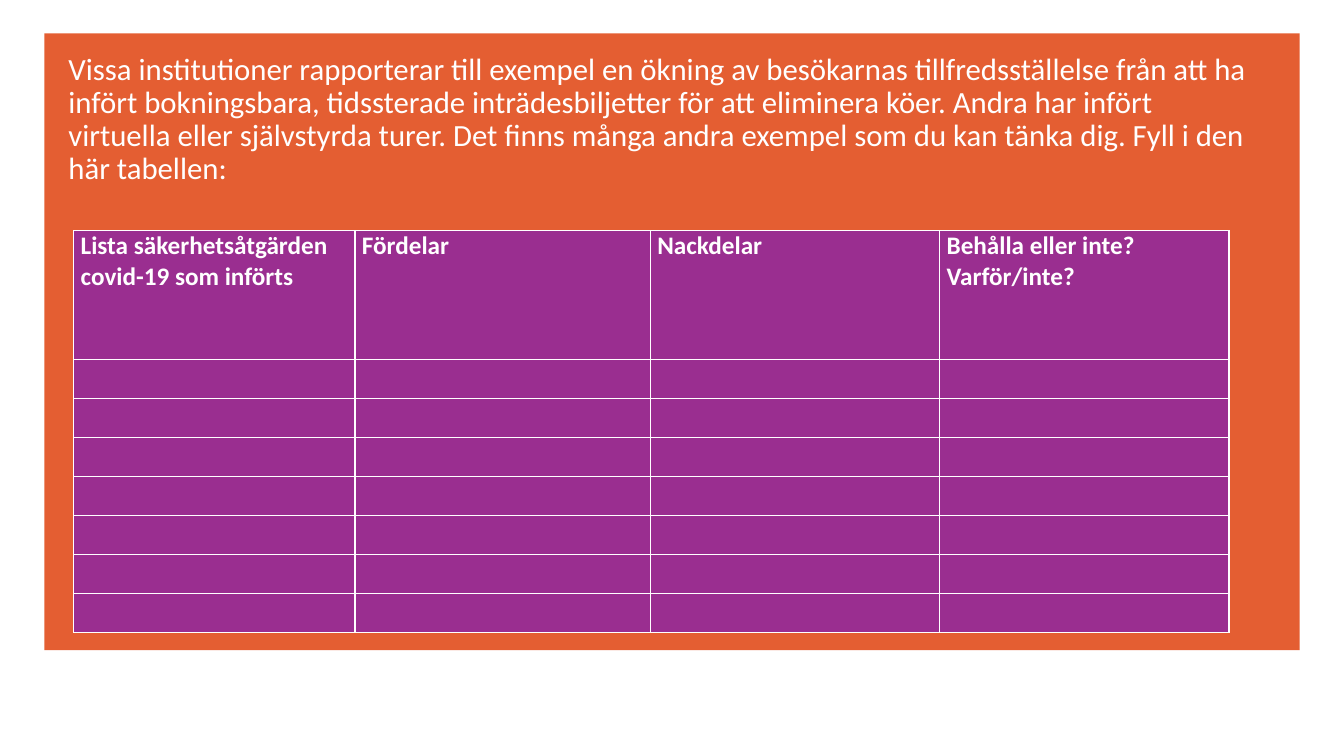
import pptx
import pptx.dml.color
import pptx.enum.shapes
import pptx.enum.text
import pptx.oxml
import pptx.oxml.ns
import pptx.util

ORANGE = pptx.dml.color.RGBColor(0xE4, 0x5E, 0x32)
PURPLE = pptx.dml.color.RGBColor(0x9A, 0x2E, 0x90)
WHITE = pptx.dml.color.RGBColor(0xFF, 0xFF, 0xFF)

INTRO = (
    "Vissa institutioner rapporterar till exempel en ökning av besökarnas "
    "tillfredsställelse från att ha infört bokningsbara, tidssterade "
    "inträdesbiljetter för att eliminera köer. Andra har infört virtuella "
    "eller självstyrda turer. Det finns många andra exempel som du kan "
    "tänka dig. Fyll i den här tabellen:"
)
HEADINGS = [
    "Lista säkerhetsåtgärden covid-19 som införts",
    "Fördelar",
    "Nackdelar",
    "Behålla eller inte? Varför/inte?",
]
COLUMN_WIDTHS = [20.93, 21.98, 21.53, 21.53]
HEADING_HEIGHT = 17.07
EMPTY_HEIGHT = 5.15
EMPTY_ROWS = 7

deck = pptx.Presentation()
deck.slide_width = pptx.util.Inches(13.33)
deck.slide_height = pptx.util.Inches(7.5)
slide = deck.slides.add_slide(deck.slide_layouts[6])

# The slide is a grid of 100 columns by 100 rows.
COLUMN = deck.slide_width / 100
ROW = deck.slide_height / 100


def grid(left, top, width, height):
    """Turn grid columns and rows into a position and size."""
    return (int(left * COLUMN), int(top * ROW),
            int(width * COLUMN), int(height * ROW))


def write(frame, text, size, bold=False, spacing=1.0):
    frame.word_wrap = True
    para = frame.paragraphs[0]
    para.alignment = pptx.enum.text.PP_ALIGN.LEFT
    para.line_spacing = spacing
    para.font.size = pptx.util.Pt(size)
    if text:
        span = para.add_run()
        span.text = text
        span.font.name = "Calibri"
        span.font.size = pptx.util.Pt(size)
        span.font.bold = bold
        span.font.color.rgb = WHITE


panel = slide.shapes.add_shape(
    pptx.enum.shapes.MSO_SHAPE.RECTANGLE, *grid(3.3, 4.4, 93.4, 81.6))
panel.shadow.inherit = False
panel.fill.solid()
panel.fill.fore_color.rgb = ORANGE
panel.line.fill.background()

intro = slide.shapes.add_textbox(*grid(4.35, 6.53, 90.25, 60.4))
write(intro.text_frame, INTRO, size=22, spacing=0.89)

table_height = HEADING_HEIGHT + EMPTY_ROWS * EMPTY_HEIGHT
table = slide.shapes.add_table(
    EMPTY_ROWS + 1, len(HEADINGS),
    *grid(5.48, 30.53, sum(COLUMN_WIDTHS), table_height)).table
table.first_row = False
table.horz_banding = False
for column, width in zip(table.columns, COLUMN_WIDTHS):
    column.width = int(width * COLUMN)

for row_index, row in enumerate(table.rows):
    row.height = int((EMPTY_HEIGHT if row_index else HEADING_HEIGHT) * ROW)
    for cell, heading in zip(row.cells, HEADINGS):
        cell.margin_left = cell.margin_right = pptx.util.Inches(0.07)
        cell.margin_top = cell.margin_bottom = 0
        properties = cell._tc.get_or_add_tcPr()
        for side in ("lnL", "lnR", "lnT", "lnB"):
            properties.append(pptx.oxml.parse_xml(
                f'<a:{side} {pptx.oxml.ns.nsdecls("a")} w="{pptx.util.Pt(1)}">'
                f'<a:solidFill><a:srgbClr val="{WHITE}"/></a:solidFill>'
                f'</a:{side}>'))
        cell.fill.solid()
        cell.fill.fore_color.rgb = PURPLE
        write(cell.text_frame, "" if row_index else heading, size=18, bold=True)

deck.save("out.pptx")
